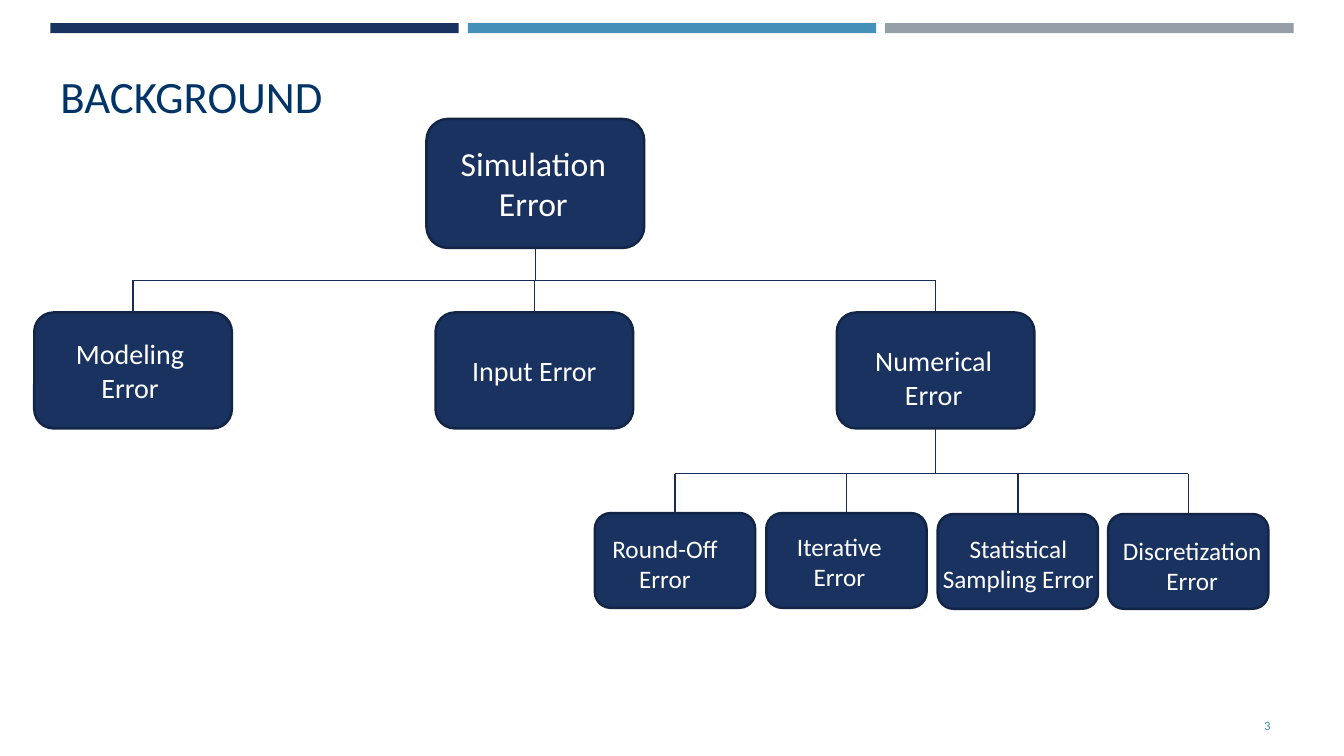
from lxml import etree
from pptx import Presentation
from pptx.dml.color import RGBColor
from pptx.enum import shapes, text
from pptx.oxml import ns
from pptx.util import Inches, Pt

COLORS = {"navy": "1A3260", "blue": "4590B8", "gray": "969FA7", "title": "003366",
          "border": "132547", "branch": "172D56", "white": "FFFFFF"}
FONT = "Calibri"
TOP, BOTTOM = 0, 2

# Each level: box size, label size in points
ROOT, CAUSE, DETAIL = (2.16, 1.28, 24), (1.96, 1.15, 20), (1.59, 0.94, 18)


def rgb(name):
    return RGBColor.from_string(COLORS[name])


def add_block(slide, kind, left, top, width, height, fill):
    block = slide.shapes.add_shape(kind, Inches(left), Inches(top), Inches(width), Inches(height))
    block.shadow.inherit = False
    block.fill.solid()
    block.fill.fore_color.rgb = rgb(fill)
    block.line.fill.background()
    return block


def add_text(slide, area, wording, size, color, align, anchor=text.MSO_ANCHOR.TOP):
    box = slide.shapes.add_textbox(*(Inches(length) for length in area))
    frame = box.text_frame
    frame.word_wrap = True
    frame.vertical_anchor = anchor
    paragraph = frame.paragraphs[0]
    paragraph.alignment = align
    run = paragraph.add_run()
    run.text = wording
    run.font.name = FONT
    run.font.size = Pt(size)
    run.font.color.rgb = rgb(color)
    return frame


def add_error(slide, level, left, top, wording, label_area):
    """Draw one rounded node of the tree with its label on top."""
    width, height, size = level
    node = add_block(slide, shapes.MSO_SHAPE.ROUNDED_RECTANGLE, left, top, width, height, "navy")
    node.line.color.rgb = rgb("border")
    node.line.width = Pt(1.75)
    frame = add_text(slide, label_area, wording, size, "white", text.PP_ALIGN.CENTER)
    frame.auto_size = text.MSO_AUTO_SIZE.SHAPE_TO_FIT_TEXT
    return node


def add_branch(slide, x1, y1, x2, y2):
    branch = slide.shapes.add_connector(shapes.MSO_CONNECTOR.STRAIGHT, x1, y1, x2, y2)
    branch.line.color.rgb = rgb("branch")
    branch.line.width = Pt(1)
    etree.SubElement(branch._element.spPr, ns.qn("a:effectLst"))
    return branch


def center(node):
    return node.left + node.width // 2


def connect_children(slide, parent, children, bus):
    """Join a parent to its children through a horizontal line at height bus."""
    bus = Inches(bus)
    trunk = add_branch(slide, center(parent), parent.top + parent.height, center(parent), bus)
    trunk.begin_connect(parent, BOTTOM)
    add_branch(slide, center(children[0]), bus, center(children[-1]), bus)
    for child in children:
        stem = add_branch(slide, center(child), bus, center(child), child.top)
        stem.end_connect(child, TOP)


def main():
    deck = Presentation()
    deck.slide_width, deck.slide_height = Inches(13.33), Inches(7.5)
    slide = deck.slides.add_slide(deck.slide_layouts[6])

    for column, color in enumerate(("navy", "blue", "gray")):
        add_block(slide, shapes.MSO_SHAPE.RECTANGLE, 0.5 + 4.14 * column, 0.23, 4.05, 0.1, color)
    add_text(slide, (0.5, 0.38, 12.32, 1.13), "BACKGROUND", 32, "title",
             text.PP_ALIGN.LEFT, text.MSO_ANCHOR.MIDDLE)
    add_text(slide, (11.55, 7, 1.15, 0.4), "3", 9, "blue",
             text.PP_ALIGN.RIGHT, text.MSO_ANCHOR.MIDDLE)

    simulation = add_error(slide, ROOT, 4.23, 1.18, "Simulation Error", (4.37, 1.37, 1.84, 0.91))
    causes = [add_error(slide, CAUSE, left, 3.1, wording, area) for left, wording, area in (
        (0.34, "Modeling Error", (0.53, 3.29, 1.52, 0.77)),
        (4.32, "Input Error", (4.54, 3.46, 1.52, 0.44)),
        (8.3, "Numerical Error", (8.5, 3.36, 1.52, 0.77)),
    )]
    details = [add_error(slide, DETAIL, left, top, wording, area) for left, top, wording, area in (
        (5.9, 5.09, "Round-Off Error", (5.97, 5.24, 1.25, 0.71)),
        (7.6, 5.09, "Iterative Error", (7.7, 5.22, 1.25, 0.71)),
        (9.3, 5.1, "Statistical Sampling Error", (9.22, 5.24, 1.76, 0.71)),
        (10.99, 5.1, "Discretization Error", (11.01, 5.26, 1.63, 0.71)),
    )]
    connect_children(slide, simulation, causes, 2.78)
    connect_children(slide, causes[-1], details, 4.7)

    deck.save("out.pptx")


if __name__ == "__main__":
    main()
